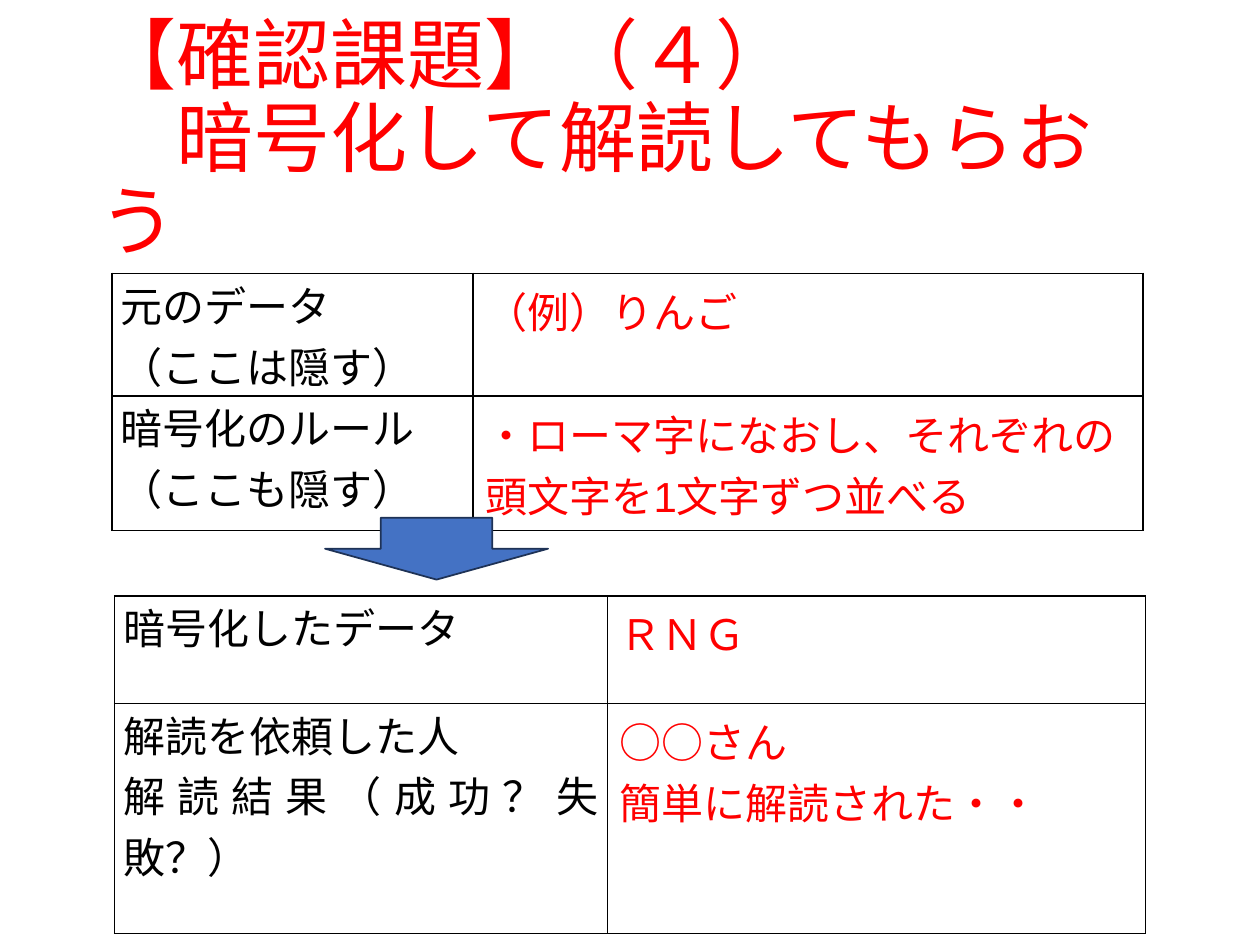
from lxml.etree import SubElement
from pptx import Presentation
from pptx.dml.color import RGBColor
from pptx.enum.shapes import MSO_SHAPE as Shape
from pptx.enum.text import MSO_ANCHOR as Anchor, MSO_AUTO_SIZE as AutoSize, PP_ALIGN as Align
from pptx.oxml.ns import qn
from pptx.util import Inches, Pt

RED = RGBColor(0xFF, 0x00, 0x00)
BLACK = RGBColor(0x00, 0x00, 0x00)
BLUE = RGBColor(0x44, 0x72, 0xC4)
NAVY = RGBColor(0x1E, 0x32, 0x56)
FONT = "Arial"
TITLE = "【確認課題】（４）\v\u3000暗号化して解読してもらおう".replace("\u3000", "　")

SECRET_ROWS = [
    (["元のデータ", "（ここは隠す）"], ["（例）りんご"]),
    (["暗号化のルール", "（ここも隠す）"],
     ["・ローマ字になおし、それぞれの頭文字を1文字ずつ並べる"]),
]
RESULT_ROWS = [
    (["暗号化したデータ"], ["ＲＮＧ"]),
    (["解読を依頼した人", "解読結果（成功？失敗？）"],
     ["○○さん", "簡単に解読された・・"]),
]


def write(frame, lines, size=24, color=BLACK, align=Align.LEFT, spacing=1.0):
    """Write one formatted paragraph for each line."""
    frame.text = "\n".join(lines)
    for para in frame.paragraphs:
        para.alignment = align
        para.line_spacing = spacing
        para.font.size = Pt(size)
        para.font.name = FONT
        para.font.color.rgb = color


def outline(cell, width=1):
    """Draw a black border on all four sides of a cell."""
    properties = cell._tc.get_or_add_tcPr()
    for position, side in enumerate(("lnL", "lnR", "lnT", "lnB")):
        line = SubElement(properties, qn(f"a:{side}"), w=str(Pt(width)))
        fill = SubElement(line, qn("a:solidFill"))
        SubElement(fill, qn("a:srgbClr"), val=str(BLACK))
        properties.insert(position, line)


def add_title(page, box):
    """Place the red heading in the title placeholder."""
    title = page.shapes.title
    title.left, title.top, title.width, title.height = box
    frame = title.text_frame
    frame.word_wrap = True
    frame.auto_size = AutoSize.NONE
    frame.vertical_anchor = Anchor.MIDDLE
    write(frame, [TITLE], size=44, color=RED, spacing=0.9)


def add_answer_table(page, box, rows, label_share, first_row_share):
    """Place a table of black labels and red answers."""
    left, top, width, height = box
    table = page.shapes.add_table(len(rows), 2, left, top, width, height).table
    table.first_row = table.horz_banding = False
    for column, share in zip(table.columns, (label_share, 1 - label_share)):
        column.width = int(width * share)
    for row, share in zip(table.rows, (first_row_share, 1 - first_row_share)):
        row.height = int(height * share)
    for row, (label, answer) in zip(table.rows, rows):
        label_cell, answer_cell = row.cells
        label_cell.margin_left = label_cell.margin_right = Inches(0.07)
        label_cell.margin_top = label_cell.margin_bottom = 0
        write(label_cell.text_frame, label, align=Align.JUSTIFY)
        write(answer_cell.text_frame, answer, color=RED)
        for cell in row.cells:
            cell.fill.background()
            outline(cell)


def add_arrow(page, box):
    """Place the block arrow that leads to the lower table."""
    arrow = page.shapes.add_shape(Shape.DOWN_ARROW, *box)
    arrow.shadow.inherit = False
    arrow.fill.solid()
    arrow.fill.fore_color.rgb = BLUE
    arrow.line.color.rgb = NAVY
    arrow.line.width = Pt(1)


def main():
    """Build the worksheet slide."""
    deck = Presentation()
    deck.slide_width, deck.slide_height = Inches(10), Inches(7.5)
    page = deck.slides.add_slide(deck.slide_layouts.get_by_name("Title Only"))

    def area(*inches):
        return [Inches(value) for value in inches]

    add_title(page, area(0.69, 0.4, 8.62, 1.45))
    add_answer_table(page, area(0.89, 2.17, 8.18, 2.03), SECRET_ROWS, 0.35, 0.48)
    add_answer_table(page, area(0.91, 4.73, 8.18, 2.68), RESULT_ROWS, 0.478, 0.318)
    add_arrow(page, area(2.58, 4.11, 1.77, 0.49))
    deck.save("out.pptx")


if __name__ == "__main__":
    main()
